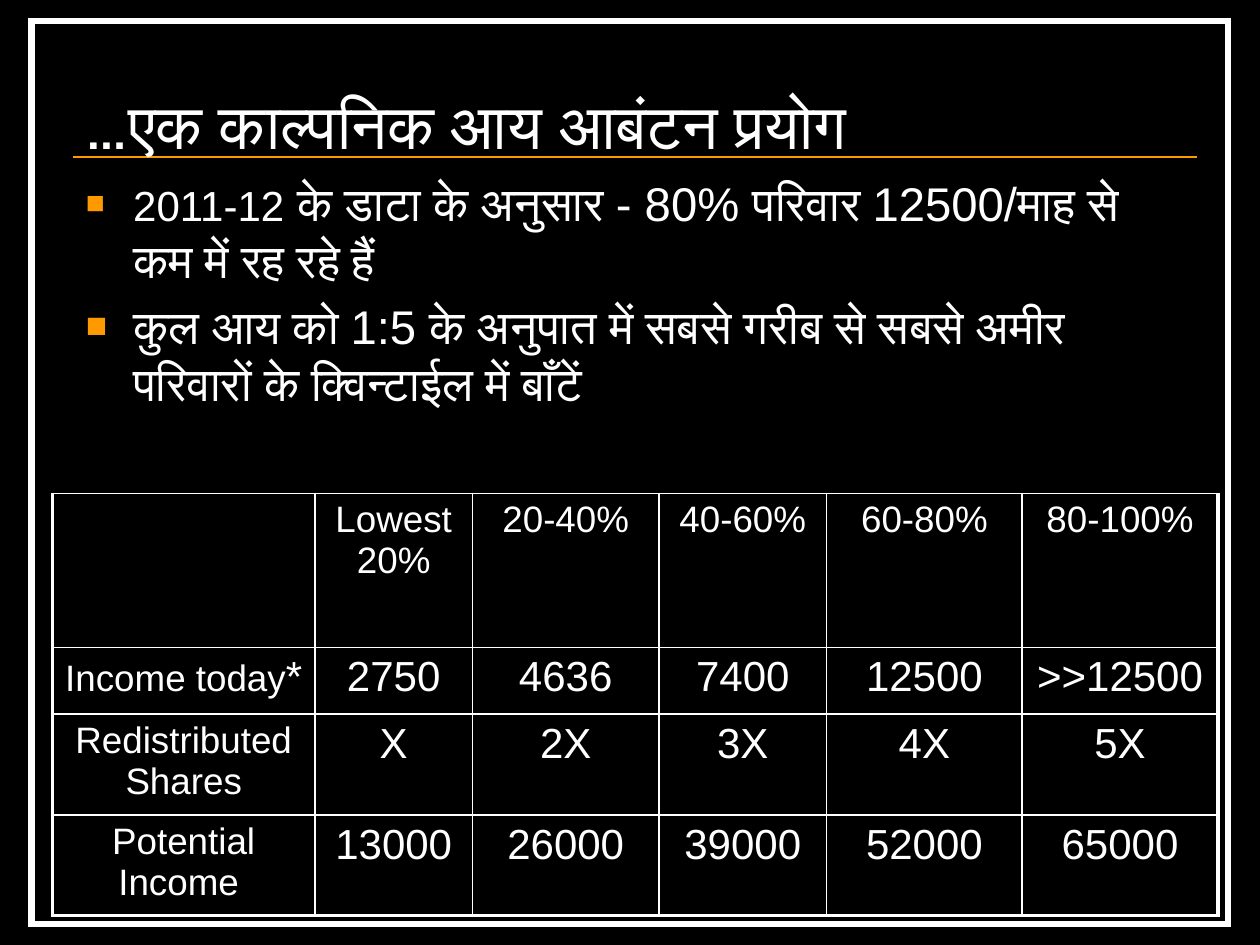
from lxml import etree
from pptx import Presentation
from pptx.dml.color import RGBColor
from pptx.enum.shapes import MSO_CONNECTOR, MSO_SHAPE
from pptx.enum.text import MSO_ANCHOR, PP_ALIGN
from pptx.oxml.ns import qn
from pptx.util import Pt

RECTANGLE = MSO_SHAPE.RECTANGLE
STRAIGHT = MSO_CONNECTOR.STRAIGHT
BOTTOM, TOP = MSO_ANCHOR.BOTTOM, MSO_ANCHOR.TOP
CENTER = PP_ALIGN.CENTER

COLORS = {"background": "000000", "text": "FFFFFF", "accent": "FF9900"}
BODY_FONT, TITLE_FONT = "Arial", "Times New Roman"
LABEL_SIZE, VALUE_SIZE = 21, 24
THIN, THICK = 1, 2.25
CELL_MARGIN = 6.5

TITLE = "…एक काल्पनिक आय आबंटन प्रयोग"
# Each paragraph is a list of (text, size) runs.
POINTS = [
    [("2011-12", 24),
     (" के डाटा के अनुसार - 80% परिवार 12500/माह से कम में रह रहे हैं", 27)],
    [("कुल आय को 1:5 के अनुपात में सबसे गरीब से सबसे अमीर परिवारों के "
      "क्विन्टाईल में बाँटें", 27)],
]
INCOME_ROWS = [
    ["", "Lowest 20%", "20-40%", "40-60%", "60-80%", "80-100%"],
    ["Income today*", "2750", "4636", "7400", "12500", ">>12500"],
    ["Redistributed Shares", "X", "2X", "3X", "4X", "5X"],
    ["Potential Income ", "13000", "26000", "39000", "52000", "65000"],
]
COLUMN_WIDTHS = [150, 90, 106.6, 95.8, 111.8, 111.8]
ROW_HEIGHTS = [88, 38, 54, 54]


def rgb(name):
    return RGBColor.from_string(COLORS[name])


def add_node(parent, tag, **attributes):
    return etree.SubElement(parent, qn(tag), attributes)


class SlideBuilder:
    def __init__(self, slide):
        self.slide = slide
        background = slide.background.fill
        background.solid()
        background.fore_color.rgb = rgb("background")

    def frame(self, left, top, width, height, weight):
        border = self.slide.shapes.add_shape(
            RECTANGLE, Pt(left), Pt(top), Pt(width), Pt(height))
        border.shadow.inherit = False
        border.fill.solid()
        border.fill.fore_color.rgb = rgb("background")
        border.line.color.rgb = rgb("text")
        border.line.width = Pt(weight)
        add_node(border.line._get_or_add_ln(), "a:miter", lim="800000")

    def rule(self, left, right, y):
        rule = self.slide.shapes.add_connector(
            STRAIGHT, Pt(left), Pt(y), Pt(right), Pt(y))
        rule.line.color.rgb = rgb("accent")
        rule.line.width = Pt(THIN)
        add_node(rule._element.spPr, "a:effectLst")
        rule._element.remove(rule._element.find(qn("p:style")))

    def text(self, left, top, width, height, paragraphs, font=BODY_FONT,
             anchor=TOP, spacing=None, bullets=False):
        box = self.slide.shapes.add_textbox(
            Pt(left), Pt(top), Pt(width), Pt(height))
        frame = box.text_frame
        frame.word_wrap = True
        frame.vertical_anchor = anchor
        for index, runs in enumerate(paragraphs):
            paragraph = frame.paragraphs[0] if index == 0 else frame.add_paragraph()
            if bullets:
                self.bullet(paragraph)
            self.fill_paragraph(paragraph, runs, font)
            if spacing:
                paragraph.line_spacing = spacing

    def bullet(self, paragraph):
        properties = paragraph._p.get_or_add_pPr()
        properties.set("marL", str(Pt(27)))
        properties.set("indent", str(-Pt(27)))
        color = add_node(properties, "a:buClr")
        add_node(color, "a:srgbClr", val=COLORS["accent"])
        add_node(properties, "a:buSzPct", val="75000")
        add_node(properties, "a:buFont", typeface=BODY_FONT)
        add_node(properties, "a:buChar", char="■")
        paragraph.space_before = Pt(5.4)

    def fill_paragraph(self, paragraph, runs, font):
        paragraph.font.name = font
        paragraph.font.color.rgb = rgb("text")
        sizes = {size for _, size in runs}
        if len(sizes) == 1:
            paragraph.font.size = Pt(sizes.pop())
        for text, size in runs:
            run = paragraph.add_run()
            run.text = text
            if paragraph.font.size is None:
                run.font.size = Pt(size)

    def table(self, left, top, widths, heights, rows):
        """Draw thin inner borders, with thick ones at left, right and bottom."""
        grid = self.slide.shapes.add_table(
            len(rows), len(widths), Pt(left), Pt(top),
            Pt(sum(widths)), Pt(sum(heights))).table
        grid.first_row = grid.horz_banding = False
        for column, width in zip(grid.columns, widths):
            column.width = Pt(width)
        for row, height in zip(grid.rows, heights):
            row.height = Pt(height)
        last_row, last_column = len(rows) - 1, len(widths) - 1
        for r, row in enumerate(rows):
            for c, text in enumerate(row):
                cell = grid.cell(r, c)
                cell.margin_left = cell.margin_right = Pt(CELL_MARGIN)
                self.borders(cell, L=c == 0, R=c == last_column,
                             T=False, B=r == last_row)
                cell.fill.background()
                paragraph = cell.text_frame.paragraphs[0]
                paragraph.alignment = CENTER
                size = LABEL_SIZE if r == 0 or c == 0 else VALUE_SIZE
                label = text.rstrip("*")
                runs = [(label, size)]
                if label != text:
                    runs.append(("*", VALUE_SIZE))
                self.fill_paragraph(paragraph, runs, BODY_FONT)

    def borders(self, cell, **thick_sides):
        properties = cell._tc.get_or_add_tcPr()
        for side, thick in thick_sides.items():
            line = add_node(properties, f"a:ln{side}",
                            w=str(Pt(THICK if thick else THIN)))
            fill = add_node(line, "a:solidFill")
            add_node(fill, "a:srgbClr", val=COLORS["text"])


def main():
    presentation = Presentation()
    presentation.slide_width, presentation.slide_height = Pt(720), Pt(540)
    blank = presentation.slide_layouts[6]
    builder = SlideBuilder(presentation.slides.add_slide(blank))

    builder.frame(18, 12, 684, 516, weight=3.5)
    builder.rule(42, 684, 89.75)
    builder.text(42, 24, 642, 72, [[(TITLE, 36)]], TITLE_FONT, BOTTOM, spacing=0.8)
    builder.text(42, 96, 636, 180, POINTS, bullets=True)
    builder.table(30, 282, COLUMN_WIDTHS, ROW_HEIGHTS, INCOME_ROWS)
    presentation.save("out.pptx")


if __name__ == "__main__":
    main()
